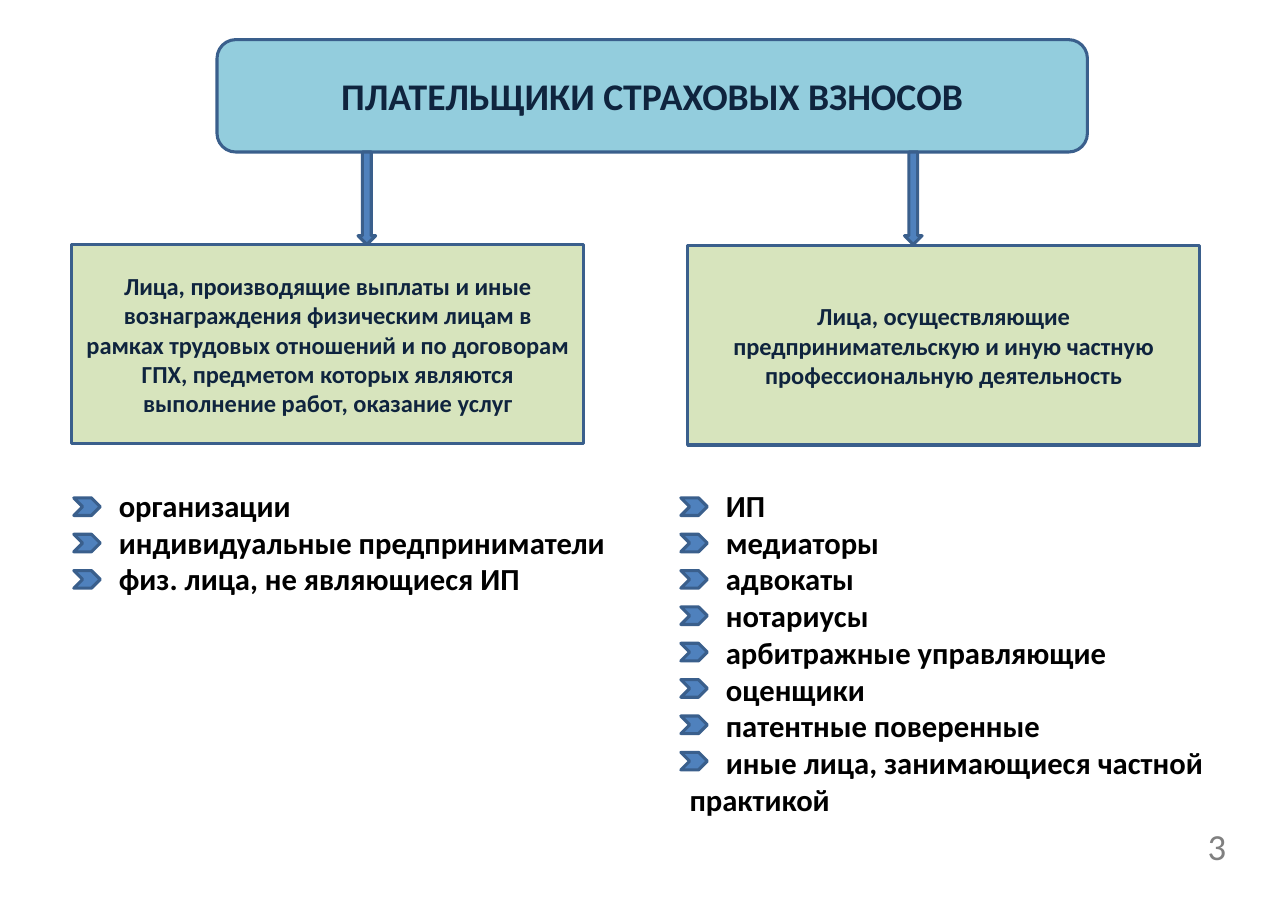
import pptx
import pptx.dml.color
import pptx.enum.shapes
import pptx.enum.text
import pptx.util

Inches = pptx.util.Inches
SHAPE = pptx.enum.shapes.MSO_SHAPE
ALIGN = pptx.enum.text.PP_ALIGN
MIDDLE = pptx.enum.text.MSO_ANCHOR.MIDDLE
TOP = pptx.enum.text.MSO_ANCHOR.TOP

NAVY, BLUE, OUTLINE = "0F243E", "4F81BD", "3A5F8C"
ROW_PITCH = 0.33
TITLE_BOX = (1.97, 0.36, 7.9, 1.02)
ARROW_CENTERS = (3.33, 8.29)
PAYERS = [
    ((0.65, 2.22, 4.65, 1.81),
     "Лица, производящие выплаты и иные вознаграждения физическим лицам в рамках "
     "трудовых отношений и по договорам ГПХ, предметом которых являются "
     "выполнение работ, оказание услуг",
     (0.65, 4.37, 5.1, 1.11),
     ["организации", "индивидуальные предприниматели", "физ. лица, не являющиеся ИП"]),
    ((6.24, 2.23, 4.65, 1.81),
     "Лица, осуществляющие предпринимательскую и иную частную "
     "профессиональную деятельность",
     (6.16, 4.37, 5.28, 3.13),
     ["ИП", "медиаторы", "адвокаты", "нотариусы", "арбитражные управляющие",
      "оценщики", "патентные поверенные", "иные лица, занимающиеся частной практикой"]),
]


def color(value):
    return pptx.dml.color.RGBColor.from_string(value)


def add_shape(s, kind, box, fill):
    sp = s.shapes.add_shape(kind, *map(Inches, box))
    sp.shadow.inherit = False
    sp.fill.solid()
    sp.fill.fore_color.rgb = color(fill)
    sp.line.color.rgb = color(OUTLINE)
    sp.line.width = pptx.util.Pt(2)
    return sp


def write(sp, *lines, size=16, fill=NAVY, bold=True, align=ALIGN.CENTER,
          anchor=MIDDLE, indent=0):
    """Fill a shape with one paragraph per line; indent moves first lines only."""
    tf = sp.text_frame
    tf.word_wrap = True
    tf.auto_size = pptx.enum.text.MSO_AUTO_SIZE.NONE
    tf.vertical_anchor = anchor
    for i, line in enumerate(lines):
        p = tf.add_paragraph() if i else tf.paragraphs[0]
        p.alignment = align
        if indent:
            p._p.get_or_add_pPr().set("indent", str(Inches(indent)))
        r = p.add_run()
        r.text = line
        r.font.name = "Calibri"
        r.font.size = pptx.util.Pt(size)
        r.font.bold = bold
        r.font.color.rgb = color(fill)


def add_title(s, box):
    add_shape(s, SHAPE.ROUNDED_RECTANGLE, box, "93CDDD")
    title = s.shapes.title
    title.left, title.top, title.width, title.height = map(Inches, box)
    write(title, "ПЛАТЕЛЬЩИКИ СТРАХОВЫХ ВЗНОСОВ", size=24.6)
    s.shapes._spTree.append(title._element)  # bring the text in front of its panel


def add_arrows(s, box):
    """Drop one arrow from the lower edge of the box at each centre."""
    left, top, width, height = box
    for center in ARROW_CENTERS:
        add_shape(s, SHAPE.DOWN_ARROW, (center - 0.08, top + height, 0.16, 0.84), BLUE)


def add_payer_list(s, box, items):
    left, top, width, height = box
    write(s.shapes.add_textbox(*map(Inches, box)), *items, size=20, fill="000000",
          align=ALIGN.LEFT, anchor=TOP, indent=0.33)
    for row in range(len(items)):
        add_shape(s, SHAPE.CHEVRON,
                  (left + 0.02, top + 0.15 + row * ROW_PITCH, 0.24, 0.16), BLUE)


def add_page_number(s, box):
    write(s.shapes.add_textbox(*map(Inches, box)), "3", size=24, fill="808080", bold=False)


def main():
    prs = pptx.Presentation()
    prs.slide_width, prs.slide_height = Inches(11.69), Inches(8.27)
    s = prs.slides.add_slide(prs.slide_layouts[5])
    add_title(s, TITLE_BOX)
    add_arrows(s, TITLE_BOX)
    for group_box, group, list_box, items in PAYERS:
        write(add_shape(s, SHAPE.RECTANGLE, group_box, "D7E4BD"), group)
        add_payer_list(s, list_box, items)
    add_page_number(s, (10.65, 7.36, 0.79, 0.63))
    prs.save("out.pptx")


if __name__ == "__main__":
    main()
